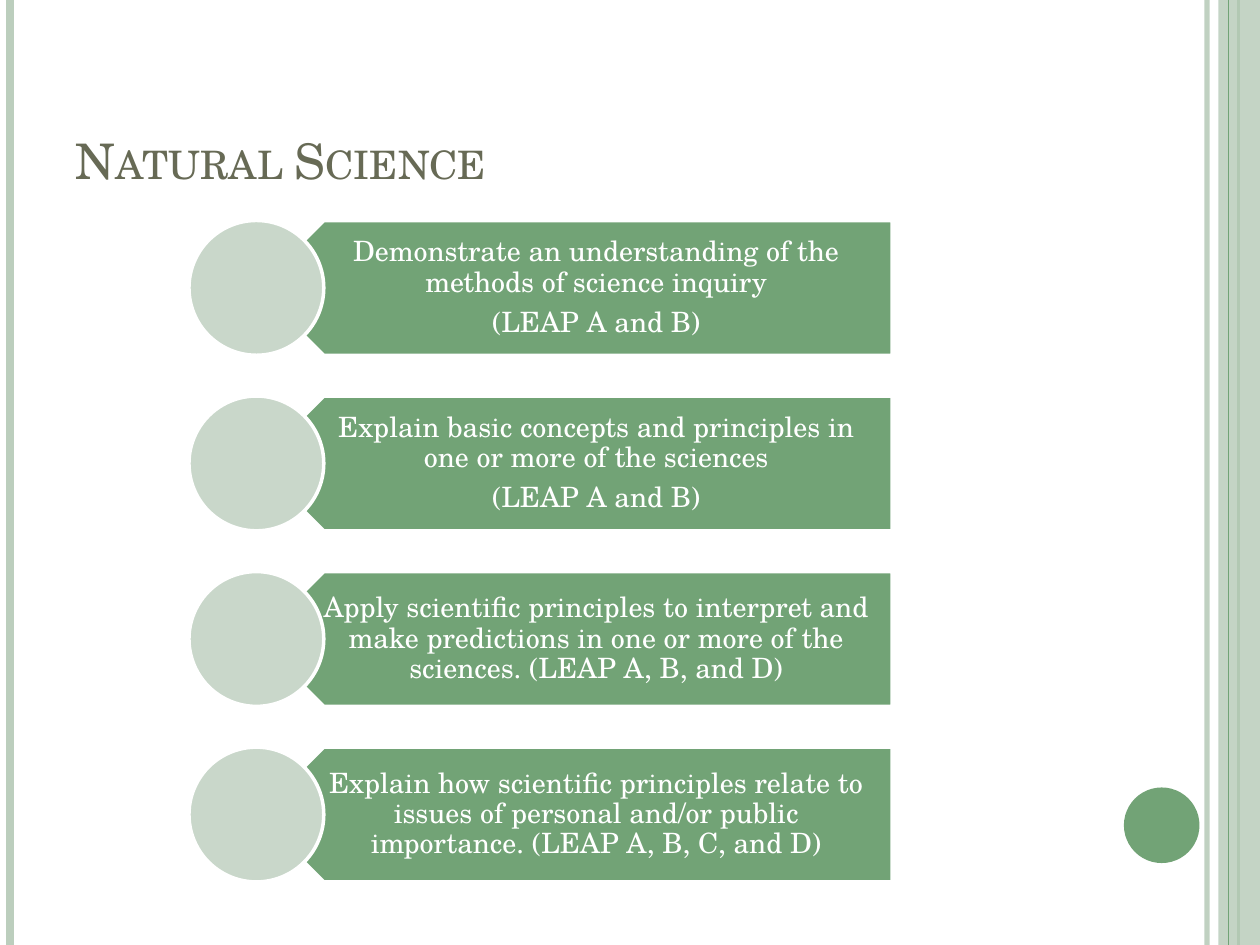
from pptx import Presentation
from pptx.dml.color import RGBColor
from pptx.enum.shapes import MSO_CONNECTOR as Conn, MSO_SHAPE as Shape
from pptx.enum.text import MSO_ANCHOR as Anchor, PP_ALIGN as Align
from pptx.oxml.ns import qn
from pptx.util import Inches, Pt
from lxml import etree

FONT = "TeX Gyre Schola"
GREEN, PALE, MIST = "72A376", "BCCEBD", "C9D7CA"
WHITE, OLIVE = "FFFFFF", "676A55"
GOALS = [
    ["Demonstrate an understanding of the methods of science inquiry", "(LEAP A and B)"],
    ["Explain basic concepts and principles in one or more of the sciences", "(LEAP A and B)"],
    ["Apply scientific principles to interpret and make predictions in one or more "
     "of the sciences. (LEAP A, B, and D)"],
    ["Explain how scientific principles relate to issues of personal and/or public "
     "importance. (LEAP A, B, C, and D)"],
]


def paint(color, tone, alpha=None):
    color.rgb = RGBColor.from_string(tone)
    if alpha:
        for node in color._xFill.iter(qn("a:srgbClr")):
            etree.SubElement(node, qn("a:alpha"), val=str(alpha * 1000))


def style(font, size, tone):
    font.name, font.size = FONT, Pt(size)
    paint(font.color, tone)


def add_form(slide, kind, x, y, w, h, tone, edge=None, alpha=None):
    form = slide.shapes.add_shape(kind, Inches(x), Inches(y), Inches(w), Inches(h))
    form.shadow.inherit = False
    form.fill.solid()
    paint(form.fill.fore_color, tone, alpha)
    if edge:
        paint(form.line.color, edge)
        form.line.width = Pt(2)
    else:
        form.line.fill.background()
    return form


def add_rule(slide, x, height, tone, width, alpha=None):
    rule = slide.shapes.add_connector(
        Conn.STRAIGHT, Inches(x), 0, Inches(x), Inches(height))
    rule.line.width = Pt(width)
    rule.line.fill.solid()
    paint(rule.line.fill.fore_color, tone, alpha)
    etree.SubElement(rule._element.spPr, qn("a:effectLst"))


def add_frame(slide, w, h):
    # Stripes on both sides and the round badge
    add_rule(slide, w - 0.42, h, PALE, 3, 93)
    add_rule(slide, 0.08, h, PALE, 4.5)
    add_rule(slide, w - 0.17, h, GREEN, 1.5)
    add_form(slide, Shape.RECTANGLE, w - 0.33, 0, 0.33, h, PALE, alpha=87)
    add_rule(slide, w - 0.25, h, GREEN, 0.75)
    add_form(slide, Shape.OVAL, w - 1.08, h - 1.25, 0.6, 0.6, GREEN)


def add_title(slide, x, y, w, h, words):
    title = slide.shapes.title
    title.left, title.top, title.width, title.height = map(Inches, (x, y, w, h))
    title.text_frame.vertical_anchor = Anchor.BOTTOM
    para = title.text_frame.paragraphs[0]
    para.text, para.alignment = words, Align.LEFT
    style(para.font, 28, OLIVE)
    para.font._element.set("cap", "small")


def add_goal(slide, x, y, w, h, lines):
    # Arrow pointing left, starting at the middle of the disc
    left, wide = x + h / 2, w - h / 2
    arrow = add_form(slide, Shape.PENTAGON, left, y, wide, h, GREEN, WHITE)
    arrow.rotation = 180

    # Wording
    box = slide.shapes.add_textbox(Inches(left), Inches(y), Inches(wide), Inches(h))
    frame = box.text_frame
    frame.word_wrap, frame.vertical_anchor = True, Anchor.MIDDLE
    frame.margin_left, frame.margin_right = Inches(0.47), Inches(0.12)
    frame.margin_top = frame.margin_bottom = Inches(0.07)
    frame.text = "\n".join(lines)
    for para in frame.paragraphs:
        para.alignment, para.line_spacing = Align.CENTER, 0.9
        para.space_after = Pt(5.6)
        style(para.font, 16, WHITE)

    # Disc
    add_form(slide, Shape.OVAL, x, y, h, h, MIST, WHITE)


def add_goals(slide, x, y, w, h, goals):
    tall = 1.07
    step = (h - tall) / (len(goals) - 1)
    for i, lines in enumerate(goals):
        add_goal(slide, x, y + i * step, w, tall, lines)


def main():
    deck = Presentation()
    deck.slide_width, deck.slide_height = Inches(10), Inches(7.5)
    slide = deck.slides.add_slide(deck.slide_layouts[5])
    add_frame(slide, 10, 7.5)
    add_title(slide, 0.5, 0.3, 8.17, 1.25, "Natural Science")
    add_goals(slide, 1.5, 1.75, 5.58, 5.25, GOALS)
    deck.save("out.pptx")


if __name__ == "__main__":
    main()
